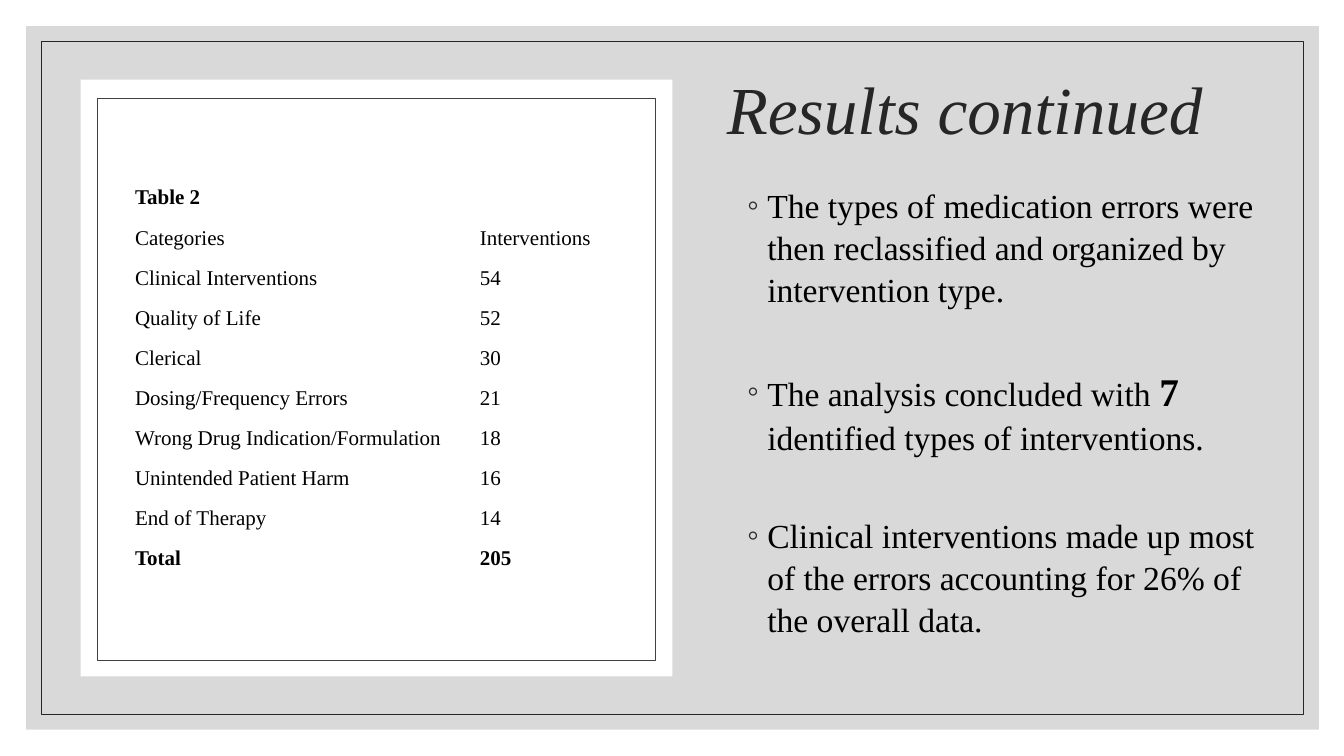
from dataclasses import dataclass

from lxml.etree import SubElement
from pptx import Presentation
from pptx.dml.color import RGBColor
from pptx.enum.shapes import MSO_SHAPE as Shape
from pptx.enum.text import MSO_ANCHOR as Anchor, MSO_AUTO_SIZE as AutoSize, PP_ALIGN as Align
from pptx.oxml.ns import qn
from pptx.util import Inches, Pt

TITLE = "Results continued"
FINDINGS = [
    [("The types of medication errors were then reclassified and organized by intervention type.", False)],
    [("The analysis concluded with ", False), ("7", True), (" identified types of interventions.", False)],
    [("Clinical interventions made up most of the errors accounting for 26% of the overall data.", False)],
]
TABLE_ROWS = [
    ("Table 2", ""),
    ("Categories", "Interventions"),
    ("Clinical Interventions", "54"),
    ("Quality of Life", "52"),
    ("Clerical", "30"),
    ("Dosing/Frequency Errors", "21"),
    ("Wrong Drug Indication/Formulation", "18"),
    ("Unintended Patient Harm", "16"),
    ("End of Therapy", "14"),
    ("Total", "205"),
]
BOLD_ROWS = {"Table 2", "Total"}
COLUMN_WIDTHS = (3.42, 1.41)


@dataclass(frozen=True)
class Theme:
    font: str = "Times New Roman"
    backdrop: str = "D9D9D9"
    panel: str = "FFFFFF"
    ink: str = "262626"
    panel_line: str = "404040"
    text: str = "000000"
    title_size: int = 48
    body_size: int = 24
    emphasis_size: int = 28
    table_size: int = 15


THEME = Theme()
FRAMES = [
    ((0.26, 0.26, 12.82, 6.98), THEME.backdrop, None),
    ((0.41, 0.41, 12.52, 6.68), None, THEME.ink),
    ((0.8, 0.79, 5.87, 5.92), THEME.panel, None),
    ((0.97, 0.98, 5.53, 5.57), None, THEME.panel_line),
]


def style_font(font, size, color, bold=False, italic=False):
    font.name = THEME.font
    font.size = Pt(size)
    font.bold = bold
    font.italic = italic
    font.color.rgb = RGBColor.from_string(color)


def add_frame(slide, box, fill, line):
    shape = slide.shapes.add_shape(Shape.RECTANGLE, *map(Inches, box))
    shape.shadow.inherit = False
    if fill:
        shape.fill.solid()
        shape.fill.fore_color.rgb = RGBColor.from_string(fill)
    else:
        shape.fill.background()
    if line:
        shape.line.color.rgb = RGBColor.from_string(line)
        shape.line.width = Pt(0.5)
    else:
        shape.line.fill.background()


def place_in_front(shape, box, anchor):
    shape.left, shape.top, shape.width, shape.height = map(Inches, box)
    shape.element.getparent().append(shape.element)
    text_frame = shape.text_frame
    text_frame.auto_size = AutoSize.NONE
    text_frame.word_wrap = True
    text_frame.vertical_anchor = anchor
    return text_frame


def add_bullet(paragraph):
    properties = paragraph._p.get_or_add_pPr()
    properties.set("marL", str(Inches(0.31)))
    properties.set("indent", str(Inches(-0.2)))
    color = SubElement(properties, qn("a:buClr"))
    SubElement(color, qn("a:srgbClr"), val=THEME.ink)
    SubElement(properties, qn("a:buFont"), typeface=THEME.font)
    SubElement(properties, qn("a:buChar"), char="◦")


def fill_title(shape):
    text_frame = place_in_front(shape, (7.11, 0.51, 5.42, 1.22), Anchor.MIDDLE)
    text_frame.text = TITLE
    paragraph = text_frame.paragraphs[0]
    paragraph.alignment = Align.LEFT
    paragraph.line_spacing = 0.9
    style_font(paragraph.runs[0].font, THEME.title_size, THEME.ink, italic=True)


def fill_findings(shape):
    text_frame = place_in_front(shape, (7.2, 1.77, 5.42, 4.83), Anchor.TOP)
    for index, finding in enumerate(FINDINGS):
        paragraph = text_frame.add_paragraph() if index else text_frame.paragraphs[0]
        add_bullet(paragraph)
        paragraph.line_spacing = 1.04
        paragraph.space_before = Pt(0)
        paragraph.space_after = Pt(40.5)
        for words, emphasised in finding:
            run = paragraph.add_run()
            run.text = words
            size = THEME.emphasis_size if emphasised else THEME.body_size
            style_font(run.font, size, THEME.text, bold=emphasised)


def add_intervention_table(slide):
    box = map(Inches, (1.32, 1.77, sum(COLUMN_WIDTHS), 3.98))
    table = slide.shapes.add_table(len(TABLE_ROWS), len(COLUMN_WIDTHS), *box).table
    table.first_row = False
    table.horz_banding = False
    for column, width in zip(table.columns, COLUMN_WIDTHS):
        column.width = Inches(width)
    for row, values in zip(table.rows, TABLE_ROWS):
        for cell, value in zip(row.cells, values):
            cell.fill.background()
            cell.vertical_anchor = Anchor.BOTTOM
            cell.margin_left = cell.margin_right = cell.margin_top = Inches(0.02)
            cell.margin_bottom = Inches(0.09)
            cell.text = value
            paragraph = cell.text_frame.paragraphs[0]
            style_font(paragraph.font, THEME.table_size, THEME.text)
            for run in paragraph.runs:
                style_font(run.font, THEME.table_size, THEME.text, bold=values[0] in BOLD_ROWS)


def main():
    presentation = Presentation()
    presentation.slide_width = Inches(13.33)
    presentation.slide_height = Inches(7.5)
    slide = presentation.slides.add_slide(presentation.slide_layouts[1])
    for box, fill, line in FRAMES:
        add_frame(slide, box, fill, line)
    fill_title(slide.shapes.title)
    fill_findings(slide.placeholders[1])
    add_intervention_table(slide)
    presentation.save("out.pptx")


if __name__ == "__main__":
    main()
